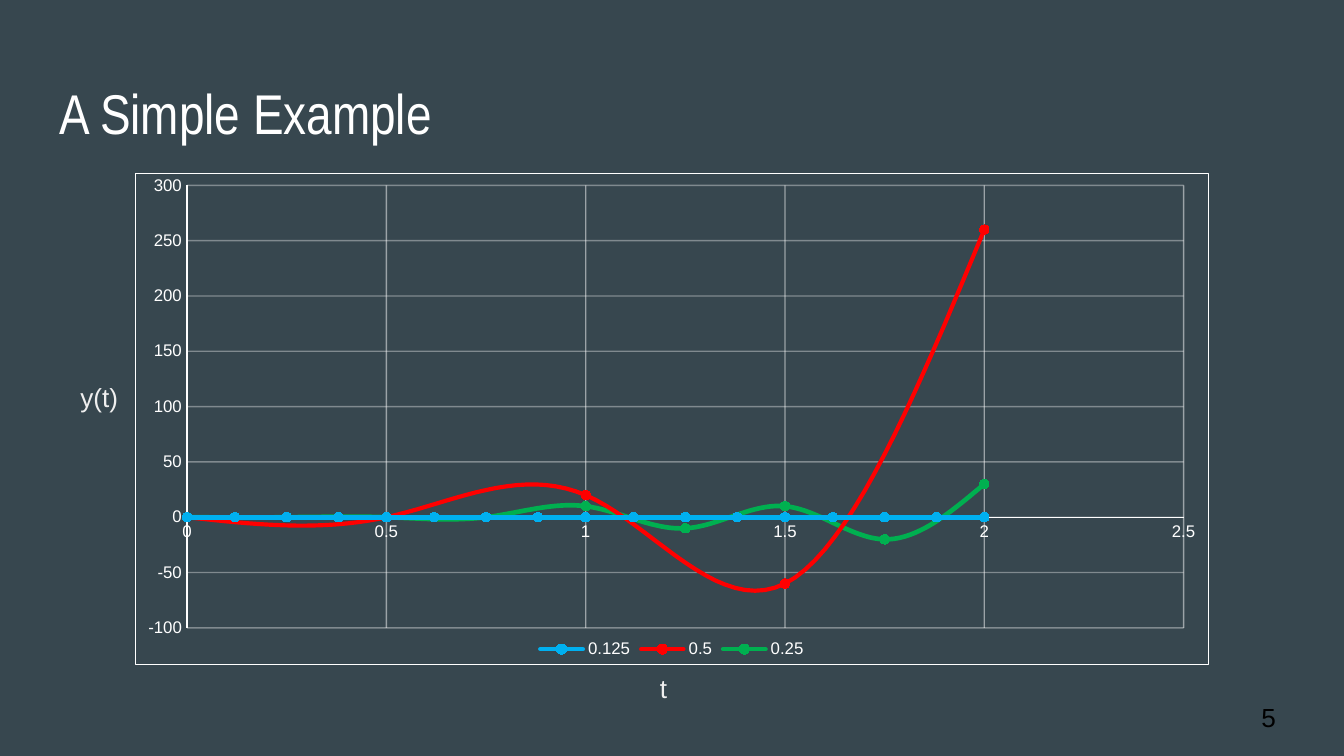
from lxml import etree
from pptx import Presentation
from pptx.chart.data import XyChartData
from pptx.dml.color import RGBColor
from pptx.enum import chart as ch, text as tx
from pptx.oxml import parse_xml
from pptx.oxml.ns import nsdecls, qn
from pptx.util import Cm, Pt

SLATE = RGBColor(0x37, 0x47, 0x4F)
WHITE = RGBColor(0xFF, 0xFF, 0xFF)
PALE = RGBColor(0xEF, 0xEF, 0xEF)
BLACK = RGBColor(0, 0, 0)
BLUE = RGBColor(0x00, 0xB0, 0xF0)
RED = RGBColor(0xFF, 0x00, 0x00)
GREEN = RGBColor(0x00, 0xB0, 0x50)

END_TIME, DECAY = 2, 10
# Step size, colour, line width
STEPS = [(0.125, BLUE, 2.5), (0.5, RED, 2.25), (0.25, GREEN, 2.5)]


def write(shape, words, *, size=14, font="Arial", color=PALE,
          anchor=tx.MSO_ANCHOR.TOP):
    frame = shape.text_frame
    frame.word_wrap = True
    frame.auto_size = tx.MSO_AUTO_SIZE.NONE
    frame.vertical_anchor = anchor
    frame.margin_left = frame.margin_right = Cm(0.25)
    frame.margin_top = frame.margin_bottom = Cm(0.25)
    paragraph = frame.paragraphs[0]
    paragraph.alignment = tx.PP_ALIGN.LEFT
    run = paragraph.add_run()
    run.text = words
    run.font.size, run.font.name = Pt(size), font
    run.font.color.rgb = color


def add_title(slide, box, words):
    heading = slide.shapes.title
    heading.left, heading.top, heading.width, heading.height = map(Cm, box)
    write(heading, words, size=30, font="Arial Narrow", color=WHITE)


def add_label(slide, box, words, **style):
    write(slide.shapes.add_textbox(*map(Cm, box)), words, **style)


def euler_data():
    """Explicit Euler for y' = -10y, y(0) = 1, to the nearest ten."""
    data = XyChartData()
    for step, _, _ in STEPS:
        series = data.add_series(str(step))
        for n in range(int(END_TIME / step) + 1):
            y = round((1 - DECAY * step) ** n, -1)
            series.add_data_point(round(n * step, 2), int(y))
    return data


def format_font(font, size):
    font.size, font.name = Pt(size), "Arial"
    font.color.rgb = WHITE


def format_axis(axis, low, high, unit, grid_opacity):
    axis.minimum_scale, axis.maximum_scale, axis.major_unit = low, high, unit
    axis.major_tick_mark = axis.minor_tick_mark = ch.XL_TICK_MARK.NONE
    axis.has_title = False
    axis.has_major_gridlines = True
    for line in (axis.format.line, axis.major_gridlines.format.line):
        line.color.rgb = WHITE
        line.width = Pt(0.75)
    tint = axis.major_gridlines.format.line._ln.find(".//" + qn("a:srgbClr"))
    etree.SubElement(tint, qn("a:alpha"), val=str(grid_opacity * 1000))
    labels = axis.tick_labels
    labels.number_format, labels.number_format_is_linked = "General", False
    format_font(labels.font, 9)


def frame_chart(chart, x, y, w, h):
    """Outline the chart and fix its inner plot area, in shares of its size."""
    chart.element.find(qn("c:chart")).addnext(parse_xml(
        f'<c:spPr {nsdecls("c", "a")}><a:noFill/><a:ln w="{Pt(0.75)}">'
        f'<a:solidFill><a:srgbClr val="{WHITE}"/></a:solidFill></a:ln></c:spPr>'))
    plot_area = chart.element.find(".//" + qn("c:plotArea"))
    for layout in plot_area.findall(qn("c:layout")):
        plot_area.remove(layout)
    settings = [("layoutTarget", "inner"), ("xMode", "edge"), ("yMode", "edge"),
                ("x", x), ("y", y), ("w", w), ("h", h)]
    items = "".join(f'<c:{tag} val="{value}"/>' for tag, value in settings)
    plot_area.insert(0, parse_xml(
        f'<c:layout {nsdecls("c")}><c:manualLayout>{items}</c:manualLayout></c:layout>'))


def format_curve(curve, color, width):
    line = curve.format.line
    line.color.rgb = color
    line.width = Pt(width)
    line._ln.set("cap", "rnd")
    # Scatter series have no public setting for smoothing
    curve._element.get_or_add_smooth().val = True
    marker = curve.marker
    marker.style, marker.size = ch.XL_MARKER_STYLE.CIRCLE, 5
    marker.format.fill.solid()
    marker.format.fill.fore_color.rgb = color
    marker.format.line.color.rgb = color


def add_euler_chart(slide, box):
    chart = slide.shapes.add_chart(
        ch.XL_CHART_TYPE.XY_SCATTER_SMOOTH, *map(Cm, box), euler_data()).chart
    chart.has_title = False
    frame_chart(chart, 0.048, 0.024, 0.929, 0.902)
    format_font(chart.font, 10)

    # Axes
    format_axis(chart.category_axis, 0, 2.5, 0.5, 49)
    format_axis(chart.value_axis, -100, 300, 50, 37)

    # Legend
    chart.has_legend = True
    chart.legend.position = ch.XL_LEGEND_POSITION.BOTTOM
    chart.legend.include_in_layout = False
    format_font(chart.legend.font, 9)

    # Curves
    plot = chart.plots[0]
    plot.vary_by_categories = False
    for curve, (_, color, width) in zip(plot.series, STEPS):
        format_curve(curve, color, width)


def main():
    deck = Presentation()
    deck.slide_width, deck.slide_height = Cm(25.4), Cm(14.29)
    slide = deck.slides.add_slide(deck.slide_layouts[5])
    slide.background.fill.solid()
    slide.background.fill.fore_color.rgb = SLATE

    add_title(slide, (0.87, 1.24, 23.67, 1.6), "A Simple Example")
    # Page number
    add_label(slide, (23.59, 13, 1.52, 1.09), "5", color=BLACK,
              anchor=tx.MSO_ANCHOR.MIDDLE)
    # Axis names
    add_label(slide, (12.22, 12.46, 0.97, 0.69), "t")
    add_label(slide, (1.27, 6.96, 1.27, 1.93), "y(t)")
    add_euler_chart(slide, (2.55, 3.27, 20.3, 9.3))
    deck.save("out.pptx")


if __name__ == "__main__":
    main()
